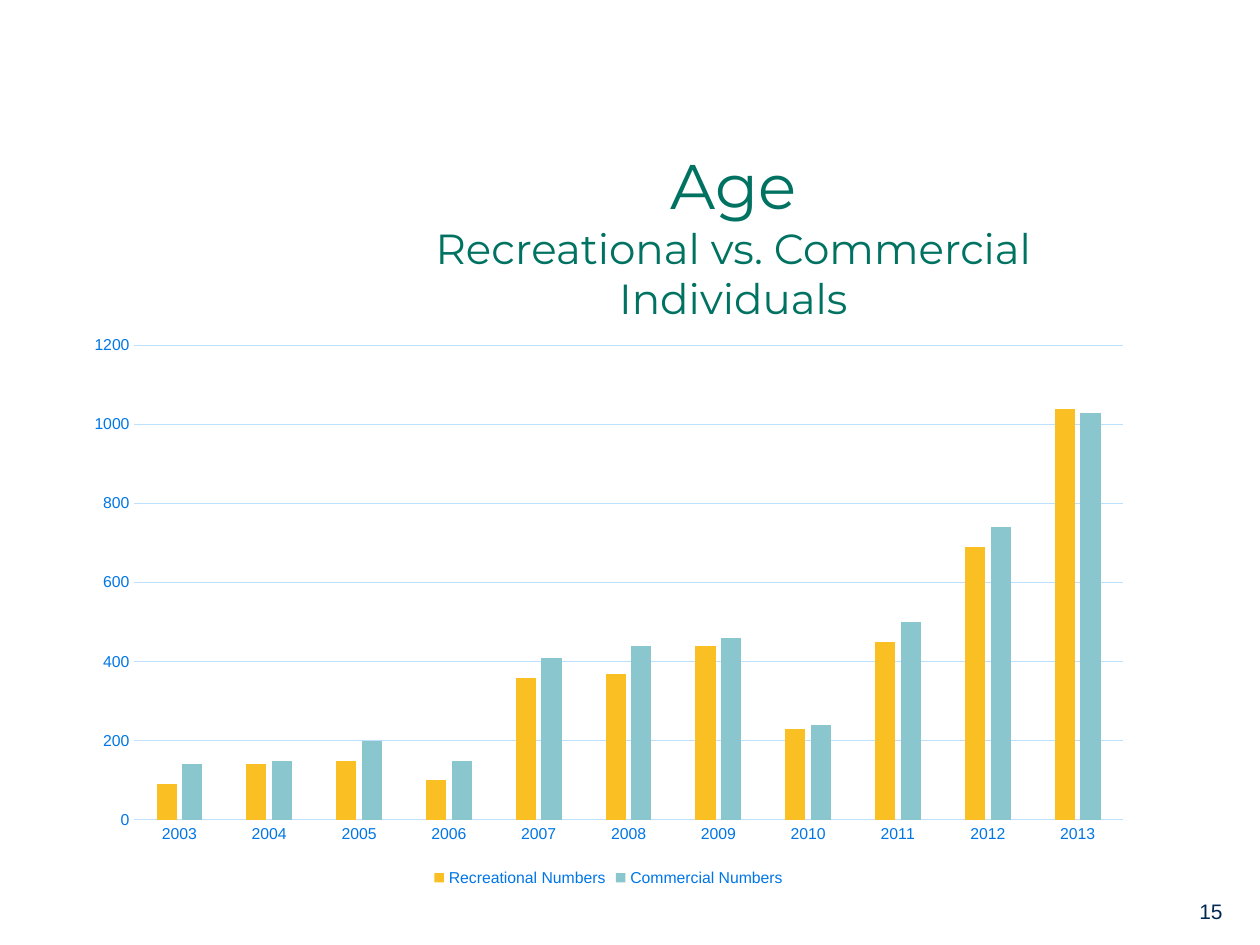
from lxml.etree import SubElement
from pptx import Presentation
from pptx.chart.data import CategoryChartData
from pptx.dml.color import RGBColor
from pptx.enum.chart import XL_CHART_TYPE, XL_LEGEND_POSITION, XL_TICK_MARK
from pptx.enum.text import MSO_ANCHOR, MSO_AUTO_SIZE, PP_ALIGN
from pptx.oxml.ns import qn
from pptx.util import Inches, Pt

COLORS = {
    "title": "007262",
    "navy": "002950",
    "axis": "0076E6",
    "grid": "BEE0FF",
    "recreational": "FABF22",
    "commercial": "8AC6CD",
}
YEARS = [str(year) for year in range(2003, 2014)]
SERIES = [
    ("Recreational Numbers", "recreational",
     [90, 140, 150, 100, 360, 370, 440, 230, 450, 690, 1040]),
    ("Commercial Numbers", "commercial",
     [140, 150, 200, 150, 410, 440, 460, 240, 500, 740, 1030]),
]


class SlideBuilder:
    """Holds the style and the current slide."""

    heading_font = "Montserrat"
    body_font = "Arial"

    def __init__(self, page):
        self.page = page

    def color(self, name):
        return RGBColor.from_string(COLORS[name])

    def style_font(self, font, name, color, size=None):
        font.name = name
        font.color.rgb = self.color(color)
        if size:
            font.size = Pt(size)

    def style_line(self, line):
        line.color.rgb = self.color("grid")
        line.width = Pt(0.75)

    def title(self, lines, left, top, width, height):
        """Fill the title with (text, size) lines of one paragraph."""
        box = self.page.shapes.title
        box.left, box.top = Inches(left), Inches(top)
        box.width, box.height = Inches(width), Inches(height)
        frame = box.text_frame
        frame.auto_size = MSO_AUTO_SIZE.NONE
        frame.word_wrap = True
        frame.vertical_anchor = MSO_ANCHOR.MIDDLE
        frame.margin_bottom = Inches(0.4)
        para = frame.paragraphs[0]
        para.alignment = PP_ALIGN.CENTER
        for index, (text, size) in enumerate(lines):
            if index:
                para.add_line_break()
            span = para.add_run()
            span.text = text
            self.style_font(span.font, self.heading_font, "title", size)
        # A break takes the size of the line it ends
        for line_break, (_, size) in zip(para._p.findall(qn("a:br")), lines):
            SubElement(line_break, qn("a:rPr"), sz=str(size * 100))

    def text(self, words, left, top, width, height, size):
        box = self.page.shapes.add_textbox(
            Inches(left), Inches(top), Inches(width), Inches(height))
        box.text_frame.word_wrap = True
        para = box.text_frame.paragraphs[0]
        para.text = words
        self.style_font(para.font, self.body_font, "navy", size)

    def column_chart(self, categories, series, left, top, width, height):
        data = CategoryChartData()
        data.categories = categories
        for name, _, values in series:
            data.add_series(name, values)
        chart = self.page.shapes.add_chart(
            XL_CHART_TYPE.COLUMN_CLUSTERED, Inches(left), Inches(top),
            Inches(width), Inches(height), data).chart
        chart.has_title = False
        self.style_font(chart.font, self.body_font, "navy", 10)

        plot = chart.plots[0]
        plot.gap_width, plot.overlap = 219, -27
        plot.vary_by_categories = False
        for bars, (_, color, _) in zip(plot.series, series):
            bars.format.fill.solid()
            bars.format.fill.fore_color.rgb = self.color(color)

        for axis in (chart.category_axis, chart.value_axis):
            axis.major_tick_mark = axis.minor_tick_mark = XL_TICK_MARK.NONE
            self.style_font(axis.tick_labels.font, self.body_font, "axis", 9)
        self.style_line(chart.category_axis.format.line)
        values_axis = chart.value_axis
        values_axis.minimum_scale, values_axis.maximum_scale = 0, 1200
        values_axis.major_unit = 200
        values_axis.format.line.fill.background()
        values_axis.has_major_gridlines = True
        self.style_line(values_axis.major_gridlines.format.line)

        chart.has_legend = True
        chart.legend.position = XL_LEGEND_POSITION.BOTTOM
        chart.legend.include_in_layout = False
        self.style_font(chart.legend.font, self.body_font, "axis", 9)


def main():
    deck = Presentation()
    deck.slide_width, deck.slide_height = Inches(10), Inches(7.5)
    builder = SlideBuilder(deck.slides.add_slide(deck.slide_layouts[5]))
    builder.text("15", 9.42, 7.08, 0.83, 0.3, size=12)
    builder.title(
        [("Age", 36), ("Recreational vs. Commercial", 24), ("Individuals", 24)],
        2.53, 1.58, 6.58, 0.92)
    builder.column_chart(YEARS, SERIES, 0.58, 2.58, 8.5, 4.5)
    deck.save("out.pptx")


if __name__ == "__main__":
    main()
